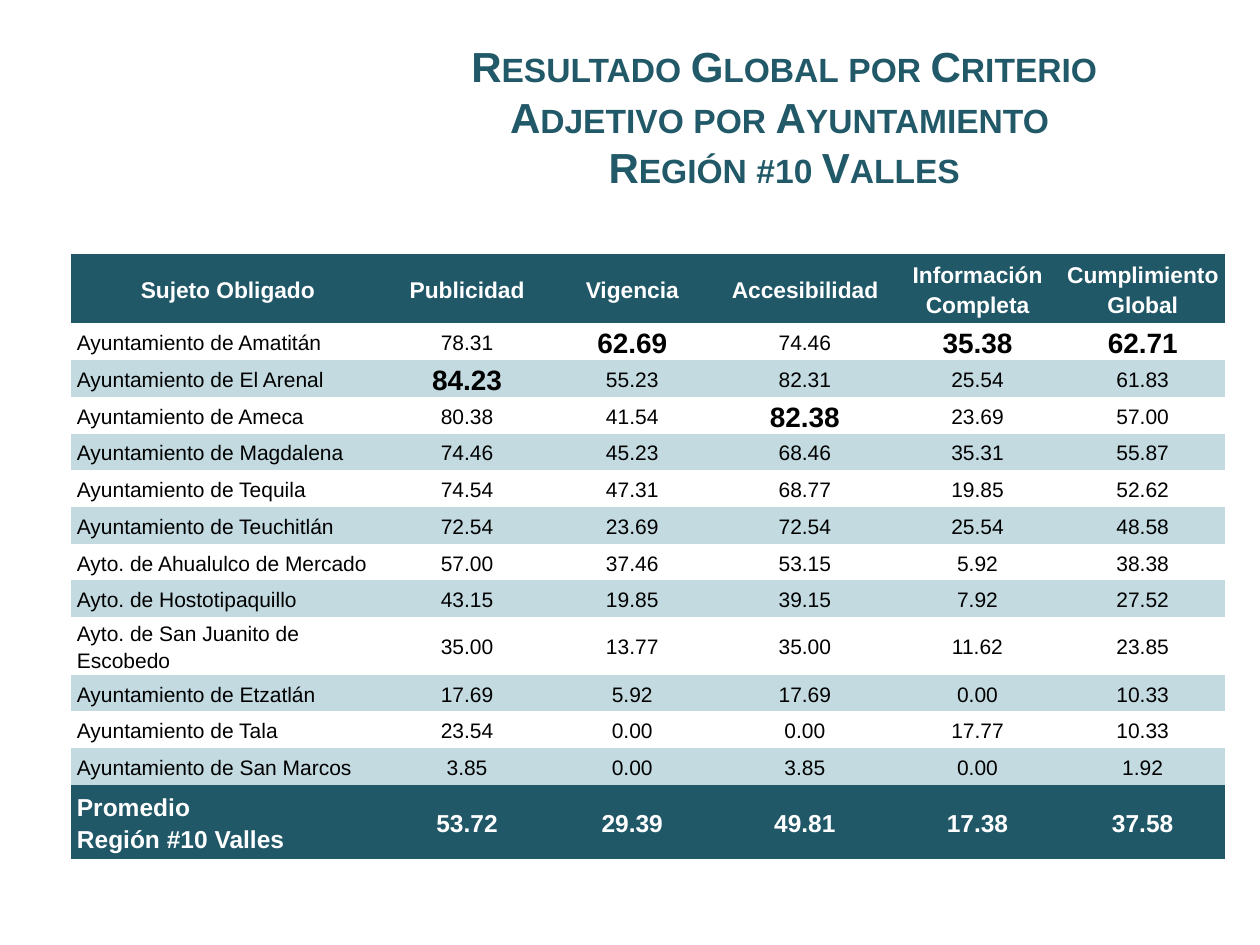
from pptx import Presentation
from pptx.dml.color import RGBColor
from pptx.enum import text
from pptx.util import Cm, Pt

# Content
TITLE = ("Resultado Global por Criterio Adjetivo por Ayuntamiento \v"
         "Región #10 Valles")
HEADER = ("Sujeto Obligado", "Publicidad", "Vigencia", "Accesibilidad",
          "Información\vCompleta", "Cumplimiento Global")
RESULTS = [
    ("Ayuntamiento de Amatitán", 78.31, 62.69, 74.46, 35.38, 62.71),
    ("Ayuntamiento de El Arenal", 84.23, 55.23, 82.31, 25.54, 61.83),
    ("Ayuntamiento de Ameca", 80.38, 41.54, 82.38, 23.69, 57.00),
    ("Ayuntamiento de Magdalena", 74.46, 45.23, 68.46, 35.31, 55.87),
    ("Ayuntamiento de Tequila", 74.54, 47.31, 68.77, 19.85, 52.62),
    ("Ayuntamiento de Teuchitlán", 72.54, 23.69, 72.54, 25.54, 48.58),
    ("Ayto. de Ahualulco de Mercado", 57.00, 37.46, 53.15, 5.92, 38.38),
    ("Ayto. de Hostotipaquillo", 43.15, 19.85, 39.15, 7.92, 27.52),
    ("Ayto. de San Juanito de Escobedo", 35.00, 13.77, 35.00, 11.62, 23.85),
    ("Ayuntamiento de Etzatlán", 17.69, 5.92, 17.69, 0.00, 10.33),
    ("Ayuntamiento de Tala", 23.54, 0.00, 0.00, 17.77, 10.33),
    ("Ayuntamiento de San Marcos", 3.85, 0.00, 3.85, 0.00, 1.92),
]
AVERAGE = ("Promedio\nRegión #10 Valles", 53.72, 29.39, 49.81, 17.38, 37.58)

THEME = {
    "font": "Arial",
    "title": RGBColor.from_string("215968"),
    "dark": RGBColor.from_string("215868"),
    "band": RGBColor.from_string("C2DAE0"),
    "white": RGBColor.from_string("FFFFFF"),
    "black": RGBColor.from_string("000000"),
    "title_size": 24, "header_size": 13, "body_size": 12,
    "best_size": 16, "average_size": 14,
}
PLAIN_TABLE_STYLE = "{2D5ABB26-0587-4C30-8999-92F81FD0307C}"

# Table geometry in centimetres
COLUMN_WIDTHS = (6.32, 3.33, 3.33, 3.63, 3.33, 3.33)
HEADER_HEIGHT, BODY_HEIGHT, WRAPPED_HEIGHT, AVERAGE_HEIGHT = 1.4, 0.74, 1.16, 1.5
WRAPPED_LENGTH = 30


def style_paragraph(paragraph, size, color, bold, align):
    paragraph.alignment = align
    font = paragraph.font
    font.name, font.size, font.bold = THEME["font"], Pt(size), bold
    font.color.rgb = color


def fill_cell(cell, value, size, color, bold, fill, centred):
    cell.text = value if isinstance(value, str) else f"{value:.2f}"
    cell.fill.solid()
    cell.fill.fore_color.rgb = fill
    cell.vertical_anchor = text.MSO_ANCHOR.MIDDLE
    cell.margin_left = cell.margin_right = Cm(0.12)
    cell.margin_top = cell.margin_bottom = 0
    align = text.PP_ALIGN.CENTER if centred else text.PP_ALIGN.LEFT
    for paragraph in cell.text_frame.paragraphs:
        paragraph.line_spacing = 1.15
        style_paragraph(paragraph, size, color, bold, align)


def add_title(slide):
    title = slide.shapes.title
    title.left, title.top, title.width, title.height = (
        Cm(7.49), Cm(0.76), Cm(16.64), Cm(3.18))
    title.text_frame.text = TITLE
    title.text_frame.vertical_anchor = text.MSO_ANCHOR.MIDDLE
    paragraph = title.text_frame.paragraphs[0]
    style_paragraph(paragraph, THEME["title_size"], THEME["title"], True,
                    text.PP_ALIGN.CENTER)
    paragraph._p.pPr.defRPr.set("cap", "small") if hasattr(
        paragraph._p.pPr, "defRPr") else paragraph.font._element.set("cap", "small")


def add_results_table(slide):
    rows = [HEADER, *RESULTS, AVERAGE]
    body_heights = [WRAPPED_HEIGHT if len(row[0]) > WRAPPED_LENGTH else BODY_HEIGHT
                    for row in RESULTS]
    heights = [HEADER_HEIGHT, *body_heights, AVERAGE_HEIGHT]
    table = slide.shapes.add_table(
        len(rows), len(HEADER), Cm(1.43), Cm(5.12),
        Cm(sum(COLUMN_WIDTHS)), Cm(sum(heights))).table
    table.first_row = table.horz_banding = False
    table._tbl.tblPr[0].text = PLAIN_TABLE_STYLE
    for column, width in zip(table.columns, COLUMN_WIDTHS):
        column.width = Cm(width)
    for row, height in zip(table.rows, heights):
        row.height = Cm(height)

    # The best value of each criterion is large and bold
    best = [max(column) for column in zip(*RESULTS)]
    last = len(rows) - 1
    for i, row in enumerate(rows):
        for j, value in enumerate(row):
            if i in (0, last):
                size = THEME["average_size" if i else "header_size"]
                color, bold, fill = THEME["white"], True, THEME["dark"]
            else:
                bold = j > 0 and value == best[j]
                size = THEME["best_size" if bold else "body_size"]
                color = THEME["black"]
                fill = THEME["white" if i % 2 else "band"]
            fill_cell(table.cell(i, j), value, size, color, bold, fill,
                      centred=i == 0 or j > 0)


def main():
    presentation = Presentation()
    presentation.slide_width, presentation.slide_height = Cm(25.4), Cm(19.05)
    slide = presentation.slides.add_slide(presentation.slide_layouts[5])
    add_title(slide)
    add_results_table(slide)
    presentation.save("out.pptx")


if __name__ == "__main__":
    main()
